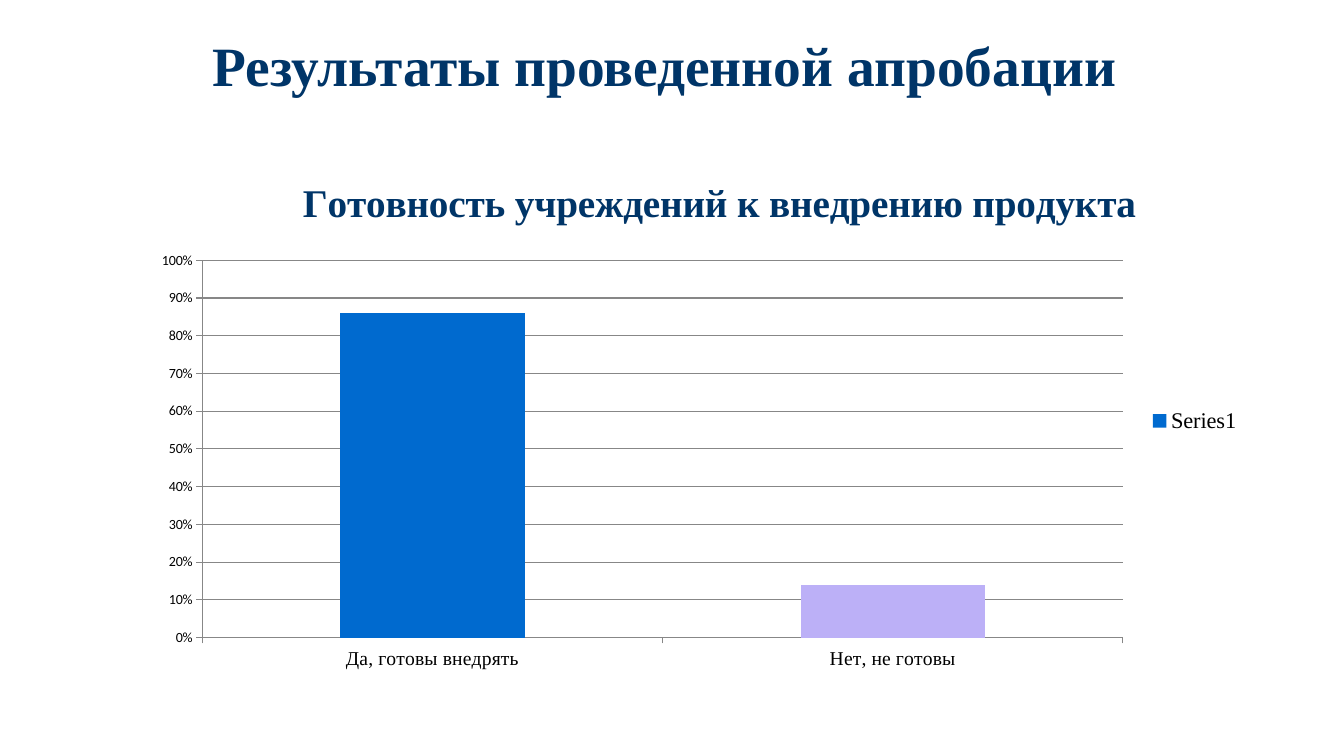
"""Builds a slide with a column chart of how ready institutions are to adopt the product."""
from lxml import etree
from pptx import Presentation
from pptx.chart.data import CategoryChartData
from pptx.dml.color import RGBColor
from pptx.enum.chart import XL_CHART_TYPE as ChartType, XL_LEGEND_POSITION as LegendPosition
from pptx.enum.chart import XL_TICK_MARK as TickMark
from pptx.enum.text import MSO_ANCHOR as Anchor, PP_ALIGN as Align
from pptx.oxml.ns import qn
from pptx.util import Pt

HEADING = "Результаты проведенной апробации"
CHART_TITLE = "Готовность учреждений к внедрению продукта"
SERIES_NAME = "Series1"
NAVY = RGBColor(0x00, 0x35, 0x68)
BLUE = RGBColor(0x00, 0x6A, 0xCF)
LILAC = RGBColor(0xBC, 0xB0, 0xF7)
BLACK = RGBColor(0, 0, 0)
GRAY = RGBColor(0x87, 0x87, 0x87)
ANSWERS = [("Да, готовы внедрять", 0.86, BLUE), ("Нет, не готовы", 0.14, LILAC)]
SERIF, SANS = "Times New Roman", "Calibri"

HEADING_BOX = (144.72, 28.8, 701.28, 39.6)
CHART_BOX = (100.08, 114.48, 794.16, 372.24)
TITLE_PLACE = {"xMode": "edge", "yMode": "edge", "x": 0.14, "y": 0.02}
PLOT_PLACE = {"layoutTarget": "inner", "xMode": "edge", "yMode": "edge",
              "x": 0.056, "y": 0.192, "w": 0.828, "h": 0.724}


def style(font, name, size, color=BLACK, bold=False):
    font.name, font.size, font.bold = name, Pt(size), bold
    font.color.rgb = color


def place(element, index, settings):
    for old in element.findall(qn("c:layout")):
        element.remove(old)
    layout = etree.Element(qn("c:layout"))
    manual = etree.SubElement(layout, qn("c:manualLayout"))
    for key, value in settings.items():
        etree.SubElement(manual, qn("c:" + key)).set("val", str(value))
    element.insert(index, layout)


def add_heading(slide):
    frame = slide.shapes.add_textbox(*map(Pt, HEADING_BOX)).text_frame
    frame.word_wrap = True
    frame.vertical_anchor = Anchor.MIDDLE
    frame.text = HEADING
    line = frame.paragraphs[0]
    line.alignment = Align.LEFT
    line.line_spacing = 0.9
    style(line.runs[0].font, SERIF, 39.6, NAVY, True)


def add_readiness_chart(slide):
    data = CategoryChartData(number_format="0%")
    data.categories = [answer for answer, _, _ in ANSWERS]
    data.add_series(SERIES_NAME, [share for _, share, _ in ANSWERS])
    chart = slide.shapes.add_chart(ChartType.COLUMN_CLUSTERED, *map(Pt, CHART_BOX), data).chart
    style(chart.font, SANS, 10)

    chart.has_title = True
    title = chart.chart_title
    title.text_frame.text = CHART_TITLE
    style(title.text_frame.paragraphs[0].runs[0].font, SERIF, 28, NAVY, True)
    place(title.element, 1, TITLE_PLACE)
    place(chart.element.find(".//" + qn("c:plotArea")), 0, PLOT_PLACE)

    chart.has_legend = True
    chart.legend.position = LegendPosition.RIGHT
    chart.legend.include_in_layout = False
    style(chart.legend.font, SERIF, 16)

    plot = chart.plots[0]
    plot.gap_width = 150
    plot.vary_by_categories = False
    columns = plot.series[0]
    columns.format.fill.solid()
    columns.format.fill.fore_color.rgb = BLUE
    for index, (_, _, color) in enumerate(ANSWERS):
        if color != BLUE:
            fill = columns.points[index].format.fill
            fill.solid()
            fill.fore_color.rgb = color

    answers, shares = chart.category_axis, chart.value_axis
    style(answers.tick_labels.font, SERIF, 14)
    style(shares.tick_labels.font, SANS, 10)
    shares.minimum_scale, shares.maximum_scale, shares.major_unit = 0, 1, 0.1
    shares.tick_labels.number_format = "0%"
    shares.tick_labels.number_format_is_linked = False
    shares.has_major_gridlines = True
    for axis in (answers, shares):
        axis.major_tick_mark = TickMark.OUTSIDE
        axis.minor_tick_mark = TickMark.NONE
    for ruled in (answers, shares, shares.major_gridlines):
        ruled.format.line.color.rgb = GRAY
        ruled.format.line.width = Pt(0.75)


def main():
    deck = Presentation()
    deck.slide_width, deck.slide_height = Pt(960), Pt(540)
    slide = deck.slides.add_slide(deck.slide_layouts[6])
    add_heading(slide)
    add_readiness_chart(slide)
    deck.save("out.pptx")


if __name__ == "__main__":
    main()
